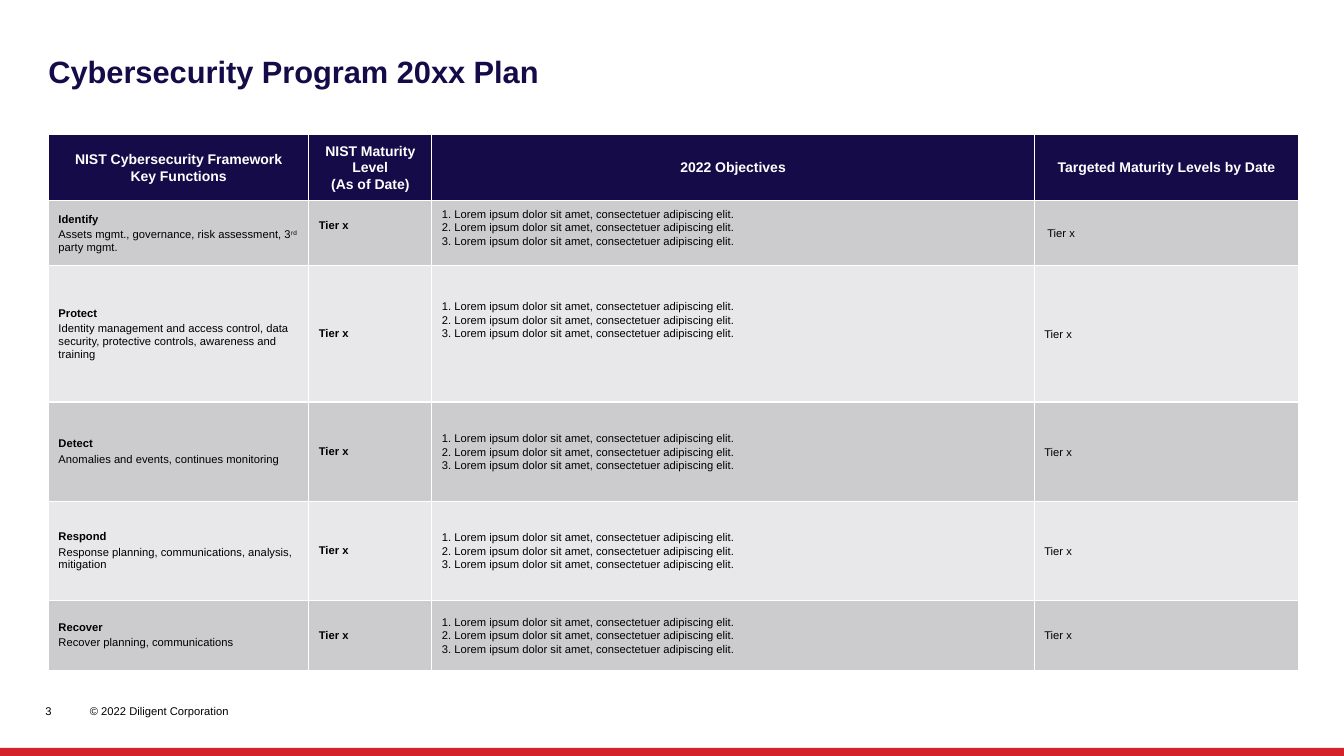
from dataclasses import dataclass

from lxml.etree import SubElement
from pptx import Presentation
from pptx.dml.color import RGBColor
from pptx.enum.shapes import MSO_SHAPE
from pptx.enum.text import MSO_ANCHOR, MSO_AUTO_SIZE, PP_ALIGN
from pptx.oxml.ns import qn
from pptx.util import Inches, Pt


@dataclass(frozen=True)
class Theme:
    font: str = "Arial"
    navy: str = "150B48"
    red: str = "D3222A"
    black: str = "000000"
    white: str = "FFFFFF"
    bands: tuple = ("CCCCCF", "E8E7E9")
    title: int = 22
    header: int = 10
    body: int = 8


class PlanSlide:
    """Places elements by percent of the slide's width and height."""

    def __init__(self, prs, theme):
        self.prs, self.theme = prs, theme
        self.s = prs.slides.add_slide(prs.slide_layouts[5])

    def box(self, x, y, w, h):
        sw, sh = self.prs.slide_width, self.prs.slide_height
        return [int(v * side / 100) for v, side in zip((x, y, w, h), (sw, sh, sw, sh))]

    def run(self, p, text, size, color, bold=False, superscript=False):
        r = p.add_run()
        r.text = text
        r.font.name, r.font.size, r.font.bold = self.theme.font, Pt(size), bold
        r.font.color.rgb = RGBColor.from_string(color)
        if superscript:
            r.font._element.set("baseline", "30000")

    def frame(self, tf, insets, anchor):
        tf.word_wrap, tf.auto_size, tf.vertical_anchor = True, MSO_AUTO_SIZE.NONE, anchor
        tf.margin_left, tf.margin_top, tf.margin_right, tf.margin_bottom = map(Inches, insets)
        return tf.paragraphs[0]

    def title(self, text, *at):
        sp = self.s.shapes.title
        sp.left, sp.top, sp.width, sp.height = self.box(*at)
        p = self.frame(sp.text_frame, (0, 0.05, 0.1, 0.05), MSO_ANCHOR.TOP)
        p.alignment = PP_ALIGN.LEFT
        self.run(p, text, self.theme.title, self.theme.navy, bold=True)

    def bar(self, *at):
        sp = self.s.shapes.add_shape(MSO_SHAPE.RECTANGLE, *self.box(*at))
        sp.shadow.inherit = False
        sp.fill.solid()
        sp.fill.fore_color.rgb = RGBColor.from_string(self.theme.red)
        sp.line.fill.background()

    def footer(self, text, tab, *at):
        sp = self.s.shapes.add_textbox(*self.box(*at))
        p = self.frame(sp.text_frame, (0, 0, 0, 0), MSO_ANCHOR.BOTTOM)
        tabs = SubElement(p._p.get_or_add_pPr(), qn("a:tabLst"))
        SubElement(tabs, qn("a:tab"), pos=str(Inches(tab)), algn="l")
        self.run(p, text, self.theme.body, self.theme.black)

    def table(self, cols, rows, *at):
        x, y, w, h = self.box(*at)
        tbl = self.s.shapes.add_table(len(rows), len(cols), x, y, w, h).table
        tbl.horz_banding = False
        for col, share in zip(tbl.columns, cols):
            col.width = int(w * share / sum(cols))
        for row, share in zip(tbl.rows, rows):
            row.height = int(h * share / sum(rows))
        return tbl

    def fill(self, cell, color):
        cell.fill.solid()
        cell.fill.fore_color.rgb = RGBColor.from_string(color)
        cell.vertical_anchor = MSO_ANCHOR.MIDDLE

    def header_cell(self, cell, lines):
        self.fill(cell, self.theme.navy)
        cell.margin_left = cell.margin_right = cell.margin_top = cell.margin_bottom = 0
        p = cell.text_frame.paragraphs[0]
        p.alignment, p.line_spacing = PP_ALIGN.CENTER, 1.07
        for i, line in enumerate(lines):
            if i:
                p.add_line_break()
            self.run(p, line, self.theme.header, self.theme.white, bold=True)

    def body_cell(self, cell, band, paragraphs, after=0, spacing=1.0):
        """Each paragraph is a list of (text, style) runs."""
        self.fill(cell, band)
        tf = cell.text_frame
        for i, runs in enumerate(paragraphs):
            p = tf.add_paragraph() if i else tf.paragraphs[0]
            p.space_after, p.line_spacing = Pt(after), spacing
            for text, style in runs:
                self.run(p, text, self.theme.body, self.theme.black, **style)


PLAIN, BOLD, SUPER = {}, {"bold": True}, {"superscript": True}
HEADERS = [
    ["NIST Cybersecurity Framework", "Key Functions"],
    ["NIST Maturity Level", "(As of Date)"],
    ["2022 Objectives"],
    ["Targeted Maturity Levels by Date"],
]
FUNCTIONS = [
    ("Identify", [("Assets mgmt., governance, risk assessment, 3", PLAIN),
                  ("rd", SUPER), (" party mgmt.", PLAIN)]),
    ("Protect", [("Identity management and access control, data security, "
                  "protective controls, awareness and training", PLAIN)]),
    ("Detect", [("Anomalies and events, continues monitoring", PLAIN)]),
    ("Respond", [("Response planning, communications, analysis, mitigation", PLAIN)]),
    ("Recover", [("Recover planning, communications", PLAIN)]),
]
OBJECTIVES = [[(f"{n}. Lorem ipsum dolor sit amet, consectetuer adipiscing elit.", PLAIN)]
              for n in (1, 2, 3)]
TIER = "Tier x"


def main():
    prs = Presentation()
    prs.slide_width, prs.slide_height = Inches(13.33), Inches(7.5)
    plan = PlanSlide(prs, Theme())

    # Bottom bar, footer and title
    plan.bar(0, 98.93, 100, 1.07)
    plan.footer("3\t© 2022 Diligent Corporation", 0.44, 3.38, 93.2, 59.94, 1.73)
    plan.title("Cybersecurity Program 20xx Plan", 3.6, 6.27, 46.36, 6.27)

    # Plan table
    tbl = plan.table((2.58, 1.22, 5.97, 2.62), (0.66, 0.64, 1.35, 0.98, 0.98, 0.69),
                     3.6, 17.73, 93.02, 70.93)
    for c, lines in enumerate(HEADERS):
        plan.header_cell(tbl.cell(0, c), lines)
    for i, (name, scope) in enumerate(FUNCTIONS):
        function, current, goals, target = (tbl.cell(i + 1, c) for c in range(4))
        band = plan.theme.bands[i % 2]
        plan.body_cell(function, band, [[(name, BOLD)], scope], after=2)
        plan.body_cell(current, band, [[(TIER, BOLD)]], after=2)
        plan.body_cell(goals, band, OBJECTIVES, spacing=1.07)
        plan.body_cell(target, band, [[(TIER, PLAIN)]], spacing=1.07)

    # Cells whose text sits off centre
    tbl.cell(1, 1).margin_bottom = Inches(0.21)
    tbl.cell(1, 2).margin_bottom = Inches(0.17)
    tbl.cell(2, 2).margin_bottom = Inches(0.33)
    tbl.cell(1, 3).margin_left = Inches(0.13)

    prs.save("out.pptx")


if __name__ == "__main__":
    main()
